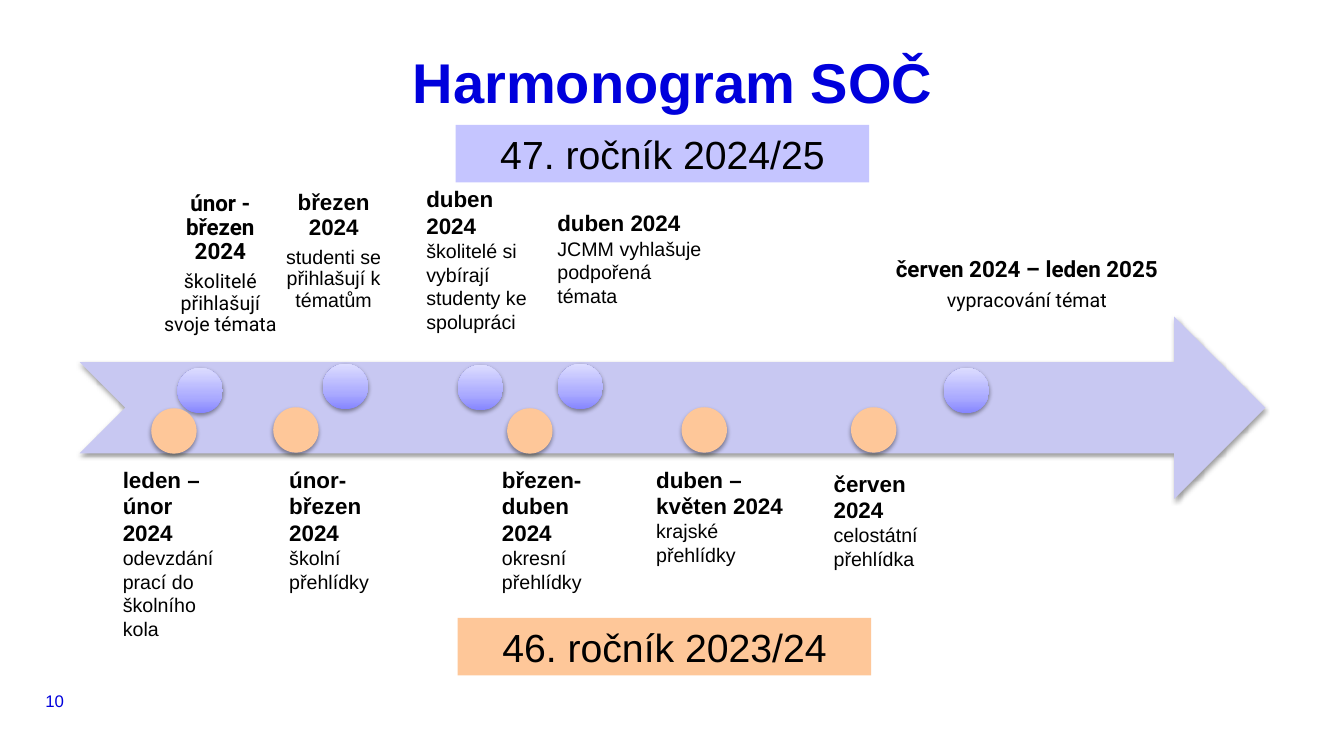
from dataclasses import dataclass

from lxml.etree import SubElement
from pptx import Presentation
from pptx.dml.color import RGBColor
from pptx.enum.shapes import MSO_SHAPE
from pptx.enum.text import MSO_ANCHOR, MSO_AUTO_SIZE, PP_ALIGN
from pptx.oxml.ns import qn
from pptx.shapes.autoshape import Shape
from pptx.slide import Slide
from pptx.text.text import TextFrame, _Paragraph as Paragraph
from pptx.util import Inches, Pt


@dataclass(frozen=True)
class Theme:
    font: str = "Arial"
    accent_font: str = "Roboto"
    blue: str = "0000DC"
    black: str = "000000"
    arrow: str = "C8C8F2"
    lavender: str = "C5C5FF"
    peach: str = "FEC799"
    gradient: tuple[tuple[int, str], ...] = ((0, "8585FF"), (35, "ABABFF"), (100, "DCDCFF"))
    title_size: int = 40
    banner_size: int = 28
    date_size: int = 16
    task_size: int = 14
    number_size: int = 12


@dataclass(frozen=True)
class Box:
    left: float
    top: float
    width: float
    height: float

    def lengths(self) -> tuple[Inches, ...]:
        return tuple(Inches(value) for value in (self.left, self.top, self.width, self.height))


@dataclass(frozen=True)
class Label:
    box: Box
    date: str
    task: str
    font: str = Theme.font
    centred: bool = False
    anchor: MSO_ANCHOR = MSO_ANCHOR.TOP


@dataclass(frozen=True)
class Banner:
    box: Box
    text: str
    color: str


THEME = Theme()
DOT_SIZE = 0.45
BLUE_DOTS = ((1.76, 3.65), (3.2, 3.61), (9.36, 3.65), (4.54, 3.62), (5.53, 3.61))
PEACH_DOTS = ((1.5, 4.05), (2.71, 4.04), (5.03, 4.05), (6.76, 4.04), (8.44, 4.04))
LABELS = (
    Label(Box(1.49, 1.78, 1.39, 1.67), "únor - březen 2024", "školitelé přihlašují svoje témata",
          THEME.accent_font, True, MSO_ANCHOR.BOTTOM),
    Label(Box(2.56, 1.78, 1.5, 2.22), "březen 2024", "studenti se přihlašují k tématům",
          centred=True),
    Label(Box(8.56, 1.97, 3.25, 1.24), "červen 2024 – leden 2025", "vypracování témat",
          THEME.accent_font, True, MSO_ANCHOR.BOTTOM),
    Label(Box(4.13, 1.79, 1.41, 1.58), "duben 2024", "školitelé si vybírají studenty ke spolupráci"),
    Label(Box(5.43, 2.03, 1.7, 1.11), "duben 2024", "JCMM vyhlašuje podpořená témata"),
    Label(Box(1.12, 4.57, 1.2, 1.85), "leden – únor 2024", "odevzdání prací do školního kola"),
    Label(Box(2.77, 4.57, 1.08, 1.38), "únor-březen 2024", "školní přehlídky"),
    Label(Box(4.88, 4.57, 1.08, 1.38), "březen- duben 2024", "okresní přehlídky"),
    Label(Box(6.41, 4.57, 1.46, 1.11), "duben – květen 2024", "krajské přehlídky"),
    Label(Box(8.17, 4.61, 1.46, 1.11), "červen 2024", "celostátní přehlídka"),
)
BANNERS = (
    Banner(Box(4.52, 1.24, 4.1, 0.57), "47. ročník 2024/25", THEME.lavender),
    Banner(Box(4.54, 6.13, 4.1, 0.57), "46. ročník 2023/24", THEME.peach),
)


def write(paragraph: Paragraph, text: str, size: int, color: str = THEME.black,
          bold: bool = False, font: str = THEME.font) -> None:
    paragraph.text = text
    paragraph.font.name = font
    paragraph.font.size = Pt(size)
    paragraph.font.bold = bold
    paragraph.font.color.rgb = RGBColor.from_string(color)


def set_margins(frame: TextFrame, horizontal: float, vertical: float) -> None:
    frame.margin_left = frame.margin_right = Inches(horizontal)
    frame.margin_top = frame.margin_bottom = Inches(vertical)


def add_filled_shape(slide: Slide, kind: MSO_SHAPE, box: Box, color: str) -> Shape:
    shape = slide.shapes.add_shape(kind, *box.lengths())
    shape.shadow.inherit = False
    shape.fill.solid()
    shape.fill.fore_color.rgb = RGBColor.from_string(color)
    shape.line.fill.background()
    return shape


def add_shadow(shape: Shape) -> None:
    """Cast a soft shadow straight down."""
    effects = shape._element.spPr.find(qn("a:effectLst"))
    shadow = SubElement(effects, qn("a:outerShdw"), blurRad=str(Pt(3.1)), dist=str(Pt(1.6)),
                        dir="5400000", rotWithShape="0")
    color = SubElement(shadow, qn("a:srgbClr"), val=THEME.black)
    SubElement(color, qn("a:alpha"), val="38000")


def apply_gradient(shape: Shape) -> None:
    """Fill from dark at the bottom to light at the top."""
    shape.fill.gradient()
    gradient = shape._element.spPr.find(qn("a:gradFill"))
    for child in list(gradient):
        gradient.remove(child)
    stops = SubElement(gradient, qn("a:gsLst"))
    for percent, color in THEME.gradient:
        stop = SubElement(stops, qn("a:gs"), pos=str(percent * 1000))
        SubElement(stop, qn("a:srgbClr"), val=color)
    SubElement(gradient, qn("a:lin"), ang="16200000", scaled="0")


def add_dot(slide: Slide, left: float, top: float) -> Shape:
    dot = add_filled_shape(slide, MSO_SHAPE.OVAL, Box(left, top, DOT_SIZE, DOT_SIZE), THEME.peach)
    add_shadow(dot)
    return dot


def add_label(slide: Slide, label: Label) -> None:
    frame = slide.shapes.add_textbox(*label.box.lengths()).text_frame
    frame.word_wrap = True
    frame.vertical_anchor = label.anchor
    date, task = frame.paragraphs[0], frame.add_paragraph()
    write(date, label.date, THEME.date_size, bold=True, font=label.font)
    write(task, label.task, THEME.task_size, font=label.font)
    if label.centred:
        set_margins(frame, 0.12, 0.12)
        for paragraph in (date, task):
            paragraph.alignment = PP_ALIGN.CENTER
            paragraph.line_spacing = 0.9
        task.space_before = Pt(5.6)
    else:
        set_margins(frame, 0.1, 0.05)
        frame.auto_size = MSO_AUTO_SIZE.SHAPE_TO_FIT_TEXT


def add_banner(slide: Slide, banner: Banner) -> None:
    frame = add_filled_shape(slide, MSO_SHAPE.RECTANGLE, banner.box, banner.color).text_frame
    set_margins(frame, 0.1, 0.05)
    frame.word_wrap = True
    frame.vertical_anchor = MSO_ANCHOR.TOP
    frame.auto_size = MSO_AUTO_SIZE.SHAPE_TO_FIT_TEXT
    write(frame.paragraphs[0], banner.text, THEME.banner_size)
    frame.paragraphs[0].alignment = PP_ALIGN.CENTER


def add_title(slide: Slide) -> None:
    title = slide.shapes.title
    title.left, title.top, title.width, title.height = Box(0.79, 0.41, 11.76, 0.87).lengths()
    frame = title.text_frame
    set_margins(frame, 0, 0)
    frame.vertical_anchor = MSO_ANCHOR.MIDDLE
    paragraph = frame.paragraphs[0]
    write(paragraph, "Harmonogram SOČ", THEME.title_size, THEME.blue, bold=True)
    paragraph.alignment = PP_ALIGN.CENTER
    paragraph.line_spacing = 0.9


def add_slide_number(slide: Slide) -> None:
    frame = slide.shapes.add_textbox(*Box(0.45, 6.81, 0.28, 0.28).lengths()).text_frame
    set_margins(frame, 0, 0)
    frame.word_wrap = True
    frame.vertical_anchor = MSO_ANCHOR.MIDDLE
    write(frame.paragraphs[0], "10", THEME.number_size, THEME.blue)


def main() -> None:
    presentation = Presentation()
    presentation.slide_width, presentation.slide_height = Inches(13.33), Inches(7.5)
    slide = presentation.slides.add_slide(presentation.slide_layouts[5])
    add_slide_number(slide)
    add_title(slide)
    arrow_box = Box(0.79, 3.14, 11.76, 1.81)
    add_shadow(add_filled_shape(slide, MSO_SHAPE.NOTCHED_RIGHT_ARROW, arrow_box, THEME.arrow))
    for left, top in BLUE_DOTS:
        apply_gradient(add_dot(slide, left, top))
    for left, top in PEACH_DOTS:
        add_dot(slide, left, top)
    for label in LABELS:
        add_label(slide, label)
    for banner in BANNERS:
        add_banner(slide, banner)
    presentation.save("out.pptx")


if __name__ == "__main__":
    main()
